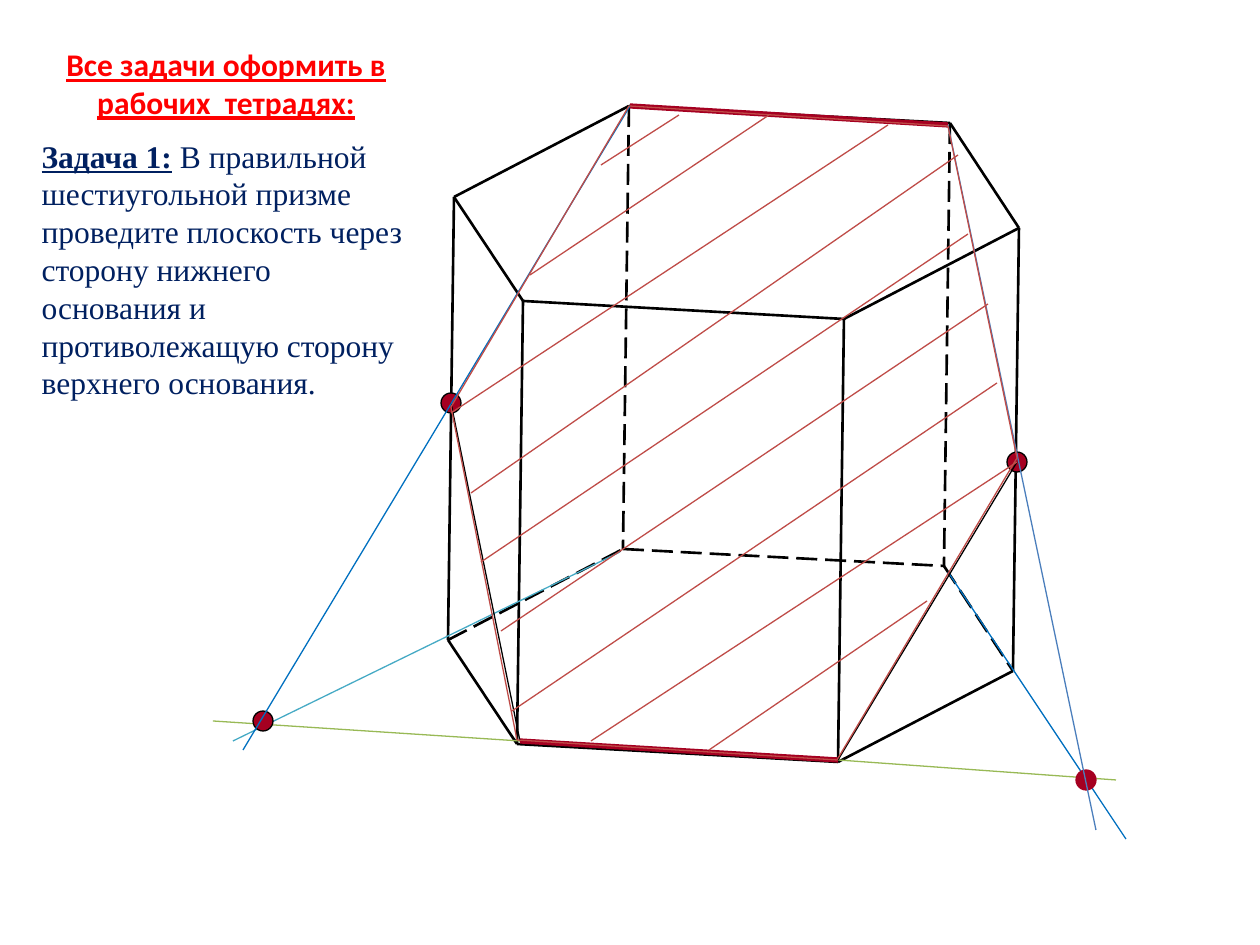
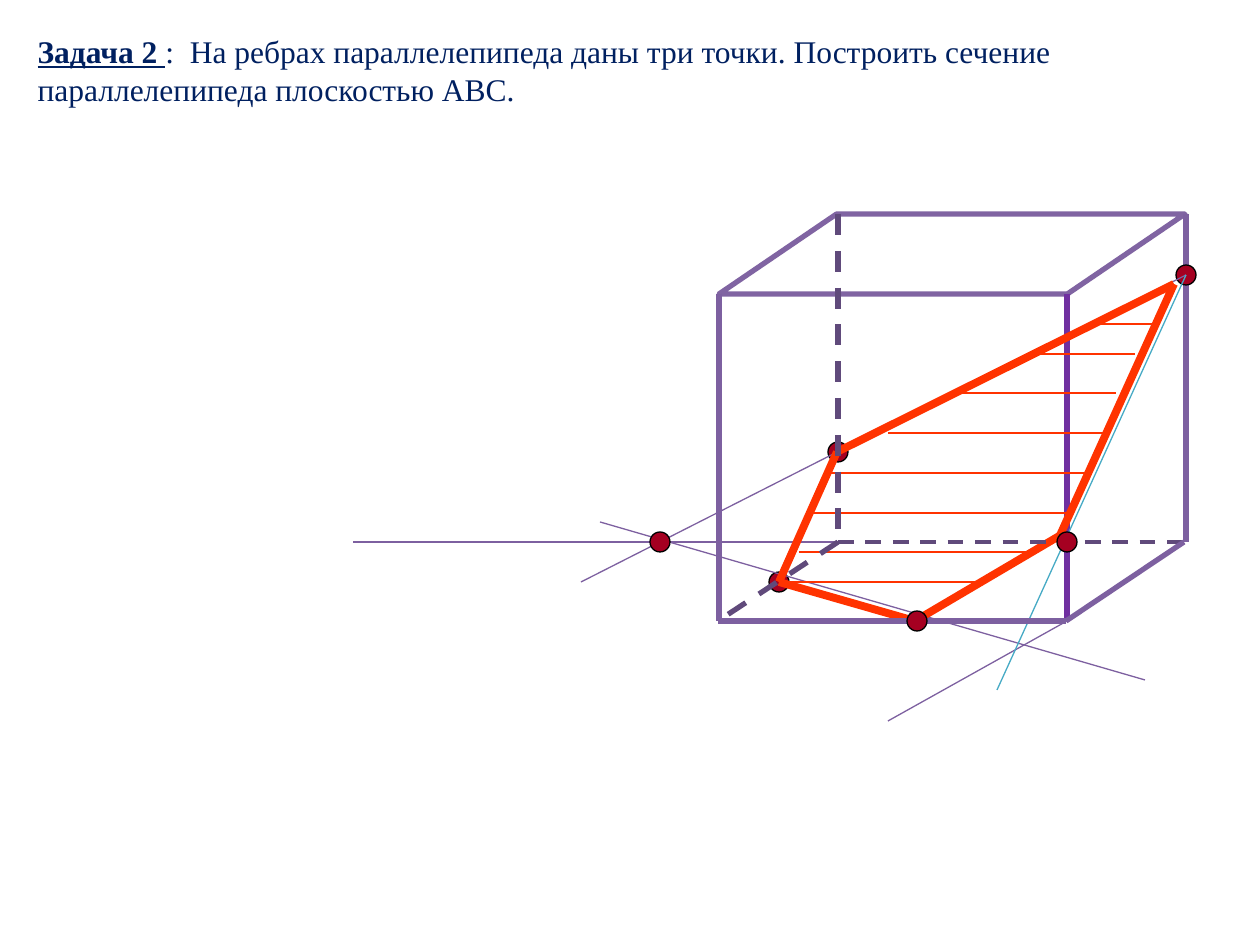
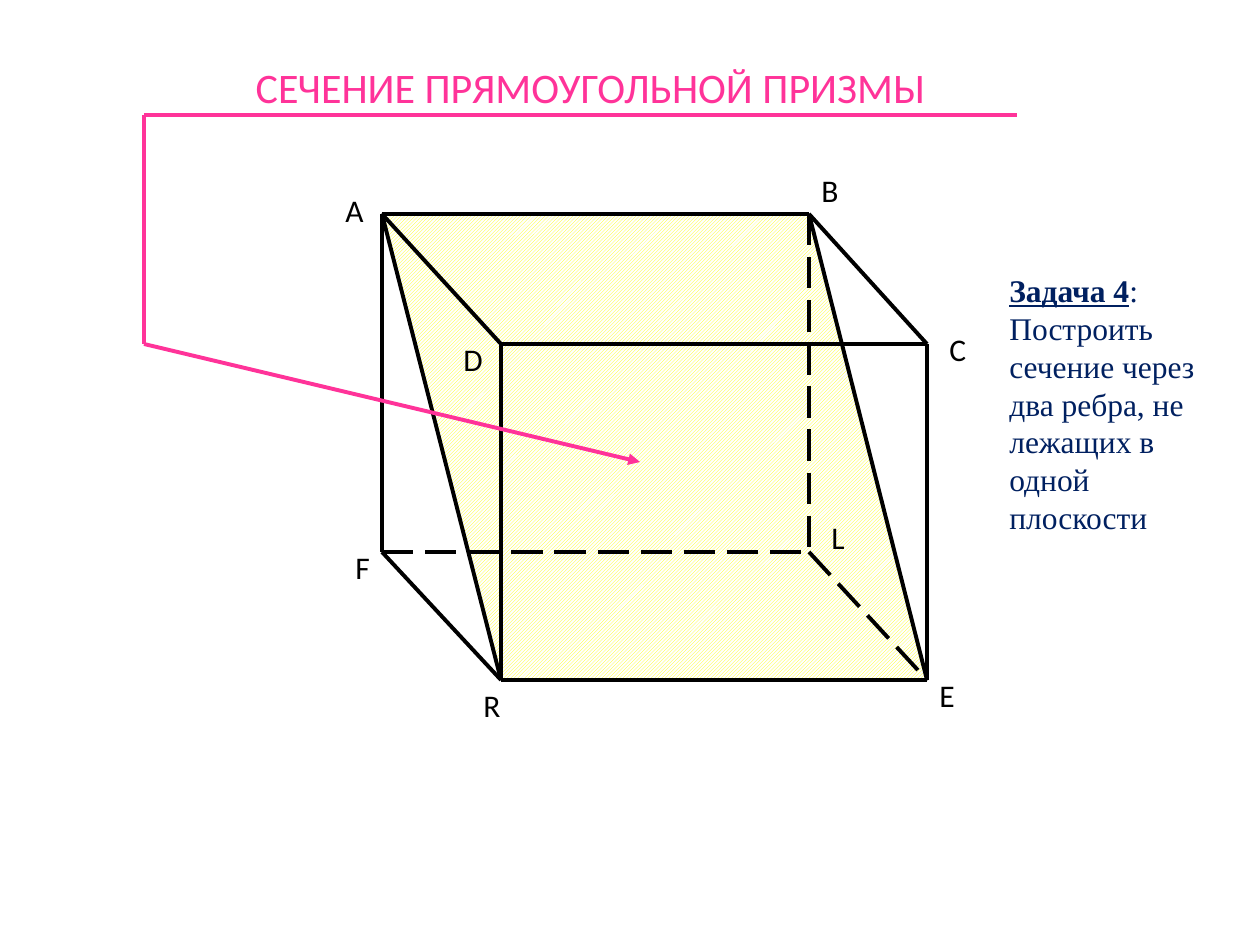
import itertools

import pptx
import pptx.dml.color
import pptx.enum.dml
import pptx.enum.shapes
import pptx.enum.text
import pptx.oxml.ns
import pptx.util
from lxml import etree

PX = 914400 / 126
TITLE_ONLY = 5
BLACK, CRIMSON, NAVY, PINK = "000000", "A50021", "002060", "FF3399"
BLUE, STEEL, GREEN, CYAN = "0070C0", "4B7EBC", "98B955", "46AAC5"
VIOLET, DARK_VIOLET, PURPLE = "7D60A0", "604A7B", "7030A0"
BRICK, ORANGE = "BF4C48", "FF3300"
DASH = pptx.enum.dml.MSO_LINE.DASH
LONG_DASH = pptx.enum.dml.MSO_LINE.LONG_DASH
CENTER = pptx.enum.text.PP_ALIGN.CENTER
LEFT = pptx.enum.text.PP_ALIGN.LEFT
DOT = 20

# ---- Content: texts as paragraphs (alignment, runs of text, font, size, colour, emphasis)


def task(number, statement):
    return (LEFT, [(number, "Times New Roman", 18, NAVY, True),
                   (statement, "Times New Roman", 18, NAVY, False)])


HEXAGON_TEXT = [
    (CENTER, [("Все задачи оформить в рабочих  тетрадях:", "Calibri", 18, "FF0000", True)]),
    task("Задача 1:", " В правильной шестиугольной призме проведите плоскость через "
         "сторону нижнего основания и противолежащую сторону верхнего основания."),
]
BOX_TEXT = [task("Задача 2 ", ":  На ребрах параллелепипеда даны три точки. "
                 "Построить сечение параллелепипеда плоскостью АВС.")]
PRISM_TITLE = [(LEFT, [("СЕЧЕНИЕ ПРЯМОУГОЛЬНОЙ ПРИЗМЫ", "Calibri", 24, PINK, False)])]
PRISM_TEXT = [task("Задача 4", ": Построить сечение через два ребра, "
                   "не лежащих в одной плоскости")]

# ---- Content: hexagonal prism (px)
HEXAGON_TOP = [(629, 106), (950, 123), (1019, 228), (844, 319), (523, 301), (454, 197)]
HEXAGON_DROP = (-6, 443)
HIDDEN_BASE_EDGES = {0, 1, 5}
HIDDEN_SIDE_EDGES = {0, 1}
HEXAGON_GIVEN_SIDES = [(630, 106, 948, 125), (520, 741, 838, 760)]
HEXAGON_EXTENSIONS = [
    (BLUE, (948, 572, 1126, 839)), (GREEN, (838, 760, 1116, 780)),
    (GREEN, (520, 741, 213, 721)), (CYAN, (620, 552, 233, 741)),
]
HEXAGON_POINTS = [(1086, 780, CRIMSON), (1017, 462, BLACK),
                  (263, 721, BLACK), (451, 403, BLACK)]
HEXAGON_TRACES = [
    (STEEL, (948, 125, 1096, 830)), (BLACK, (1017, 462, 838, 760)),
    (BLACK, (451, 403, 520, 741)), (BLUE, (630, 106, 243, 750)),
]
HEXAGON_SECTION = [(629, 106), (948, 126), (1017, 458), (837, 760), (517, 740), (451, 407)]
HEXAGON_HATCH = [
    (601, 165, 679, 115), (530, 275, 769, 115), (451, 413, 888, 125),
    (471, 493, 958, 155), (481, 562, 968, 234), (501, 631, 988, 304),
    (512, 711, 997, 383), (591, 741, 1017, 462), (709, 750, 927, 601),
]

# ---- Content: parallelepiped (px)
BOX_SIDES = [(VIOLET, (719, 294, 719, 621)), (VIOLET, (1186, 214, 1186, 542)),
             (PURPLE, (1067, 294, 1067, 621))]
BOX_GIVEN_POINTS = [(838, 452), (1186, 275), (779, 582)]
BOX_TRACES = [
    (VIOLET, (1186, 275, 581, 582)), (VIOLET, (838, 542, 353, 542)),
    (VIOLET, (600, 522, 1145, 680)), (VIOLET, (1067, 621, 888, 721)),
    (CYAN, (1186, 275, 997, 690)),
]
BOX_SECTION = [(1057, 542), (1174, 284), (837, 452), (779, 582), (915, 621), (1066, 532)]
BOX_HATCH = [  # y, left, right
    (324, 1096, 1155), (354, 1037, 1135), (393, 958, 1116), (433, 888, 1106),
    (473, 828, 1086), (513, 809, 1066), (552, 799, 1037), (582, 789, 978),
]
BOX_BASE = [
    (DARK_VIOLET, 2.25, DASH, (838, 542, 1184, 542)), (VIOLET, 3, None, (718, 621, 1066, 621)),
    (DARK_VIOLET, 3, DASH, (838, 542, 718, 621)), (VIOLET, 3, None, (1184, 542, 1066, 621)),
]
BOX_FOUND_POINTS = [(917, 621), (1067, 542), (660, 542)]
BOX_HIDDEN_SIDE = (838, 214, 838, 542)

# ---- Content: rectangular prism (px)
VERTICES = {"A": (382, 214), "B": (809, 214), "C": (927, 344), "D": (501, 344),
            "F": (382, 552), "L": (809, 552), "E": (927, 680), "R": (501, 680)}
VISIBLE_EDGES = "AB DC RE AF CE DR AD BC FR".split()
HIDDEN_EDGES = "BL FL LE".split()
SECTION_EDGES = "AR BE".split()
LABELS = {"A": (333, 185, 49), "B": (809, 165, 89), "C": (937, 324, 39),
          "D": (451, 334, 79), "F": (343, 542, 44), "R": (471, 680, 47),
          "E": (927, 670, 45), "L": (819, 512, 43)}  # left, top, width
POINTER = [(1017, 115), (144, 115), (144, 344), (640, 462)]


# ---- Drawing helpers
def emu(px):
    return pptx.util.Emu(round(px * PX))


def rgb(value):
    return pptx.dml.color.RGBColor.from_string(value)


def outline(shape, colour, width):
    shape.line.color.rgb = rgb(colour)
    shape.line.width = pptx.util.Pt(width)


def draw_line(shapes, ends, colour, width=0.75, dash=None, arrow=False):
    line = shapes.add_connector(pptx.enum.shapes.MSO_CONNECTOR.STRAIGHT, *map(emu, ends))
    outline(line, colour, width)
    if dash:
        line.line.dash_style = dash
    properties = line._element.spPr
    if arrow:
        stroke = properties.find(pptx.oxml.ns.qn("a:ln"))
        etree.SubElement(stroke, pptx.oxml.ns.qn("a:tailEnd"), type="triangle")
    etree.SubElement(properties, pptx.oxml.ns.qn("a:effectLst"))


def draw_path(shapes, points, colour, width=0.75):
    for start, end in itertools.pairwise(points):
        draw_line(shapes, start + end, colour, width)


def draw_point(slide, x, y, border=BLACK):
    point = slide.shapes.add_shape(pptx.enum.shapes.MSO_SHAPE.OVAL, emu(x - DOT / 2),
                                   emu(y - DOT / 2), emu(DOT), emu(DOT))
    point.shadow.inherit = False
    point.fill.solid()
    point.fill.fore_color.rgb = rgb(CRIMSON)
    outline(point, border, 0.75)


def write(holder, paragraphs):
    frame = holder.text_frame
    frame.word_wrap = True
    frame.auto_size = pptx.enum.text.MSO_AUTO_SIZE.NONE
    frame.vertical_anchor = pptx.enum.text.MSO_ANCHOR.TOP
    for index, (alignment, runs) in enumerate(paragraphs):
        paragraph = frame.add_paragraph() if index else frame.paragraphs[0]
        paragraph.alignment = alignment
        paragraph.space_before = pptx.util.Pt(9 if index else 0)
        for text, font, size, colour, emphasis in runs:
            run = paragraph.add_run()
            run.text = text
            run.font.name = font
            run.font.size = pptx.util.Pt(size)
            run.font.color.rgb = rgb(colour)
            run.font.bold = emphasis
            run.font.underline = emphasis


def write_box(slide, place, paragraphs):
    write(slide.shapes.add_textbox(*map(emu, place)), paragraphs)


def new_slide(deck, place, paragraphs):
    slide = deck.slides.add_slide(deck.slide_layouts[TITLE_ONLY])
    title = slide.shapes.title
    title.left, title.top, title.width, title.height = map(emu, place)
    write(title, paragraphs)
    return slide


def new_group(slide):
    return slide.shapes.add_group_shape().shapes


# ---- Slides
def hexagon_slide(deck):
    slide = new_slide(deck, (29, 39, 394, 375), HEXAGON_TEXT)
    prism = new_group(slide)
    bottom = [(x + HEXAGON_DROP[0], y + HEXAGON_DROP[1]) for x, y in HEXAGON_TOP]
    for i, corner in enumerate(HEXAGON_TOP):
        following = (i + 1) % len(HEXAGON_TOP)
        draw_line(prism, corner + HEXAGON_TOP[following], BLACK, 1.5)
        draw_line(prism, bottom[i] + bottom[following], BLACK, 1.5,
                  LONG_DASH if i in HIDDEN_BASE_EDGES else None)
        draw_line(prism, corner + bottom[i], BLACK, 1.5,
                  LONG_DASH if i in HIDDEN_SIDE_EDGES else None)
    for ends in HEXAGON_GIVEN_SIDES:
        draw_line(slide.shapes, ends, CRIMSON, 3)
    for colour, ends in HEXAGON_EXTENSIONS:
        draw_line(slide.shapes, ends, colour)
    for point in HEXAGON_POINTS:
        draw_point(slide, *point)
    for colour, ends in HEXAGON_TRACES:
        draw_line(slide.shapes, ends, colour)
    section = new_group(slide)
    draw_path(section, HEXAGON_SECTION + HEXAGON_SECTION[:1], BRICK)
    for ends in HEXAGON_HATCH:
        draw_line(section, ends, BRICK)


def box_slide(deck):
    slide = new_slide(deck, (25, 26, 1191, 89), BOX_TEXT)
    lid = slide.shapes.add_shape(pptx.enum.shapes.MSO_SHAPE.PARALLELOGRAM,
                                 *map(emu, (719, 214, 466, 80)))
    lid.adjustments[0] = 1.47
    lid.shadow.inherit = False
    lid.fill.solid()
    lid.fill.fore_color.rgb = rgb("FFFFFF")
    outline(lid, "8064A2", 3)
    for colour, ends in BOX_SIDES:
        draw_line(slide.shapes, ends, colour, 3)
    for point in BOX_GIVEN_POINTS:
        draw_point(slide, *point)
    for colour, ends in BOX_TRACES:
        draw_line(slide.shapes, ends, colour)
    section = new_group(slide)
    draw_path(section, BOX_SECTION, ORANGE, 4.5)
    for y, left, right in BOX_HATCH:
        draw_line(section, (left, y, right, y), ORANGE)
    base = new_group(slide)
    for colour, width, dash, ends in BOX_BASE:
        draw_line(base, ends, colour, width, dash)
    for point in BOX_FOUND_POINTS:
        draw_point(slide, *point)
    draw_line(slide.shapes, BOX_HIDDEN_SIDE, DARK_VIOLET, 3, DASH)


def prism_slide(deck):
    slide = new_slide(deck, (243, 55, 753, 63), PRISM_TITLE)
    start, *others = [VERTICES[name] for name in "RABE"]
    builder = slide.shapes.build_freeform(*start, scale=PX)
    builder.add_line_segments(others, close=True)
    section = builder.convert_to_shape()
    section.shadow.inherit = False
    section.fill.patterned()
    section.fill.pattern = pptx.enum.dml.MSO_PATTERN.DARK_UPWARD_DIAGONAL
    section.fill.fore_color.rgb = rgb("FFFF00")
    section.fill.back_color.rgb = rgb("FFFFFF")
    outline(section, BLACK, 0.75)

    prism = new_group(slide)
    for shapes, edges, dash in ((prism, HIDDEN_EDGES, LONG_DASH), (prism, VISIBLE_EDGES, None),
                                (slide.shapes, SECTION_EDGES, None)):
        for first, second in edges:
            draw_line(shapes, VERTICES[first] + VERTICES[second], BLACK, 2.25, dash)
    for name, (left, top, width) in LABELS.items():
        write_box(slide, (left, top, width, 54),
                  [(LEFT, [(name, "Calibri", 18, BLACK, False)])])
    draw_path(slide.shapes, POINTER[:-1], PINK, 2.25)
    draw_line(slide.shapes, POINTER[-2] + POINTER[-1], PINK, 2.25, arrow=True)
    write_box(slide, (997, 265, 228, 280), PRISM_TEXT)


def main():
    deck = pptx.Presentation()
    deck.slide_width, deck.slide_height = emu(1260), emu(945)
    hexagon_slide(deck)
    box_slide(deck)
    prism_slide(deck)
    deck.save("out.pptx")


if __name__ == "__main__":
    main()
